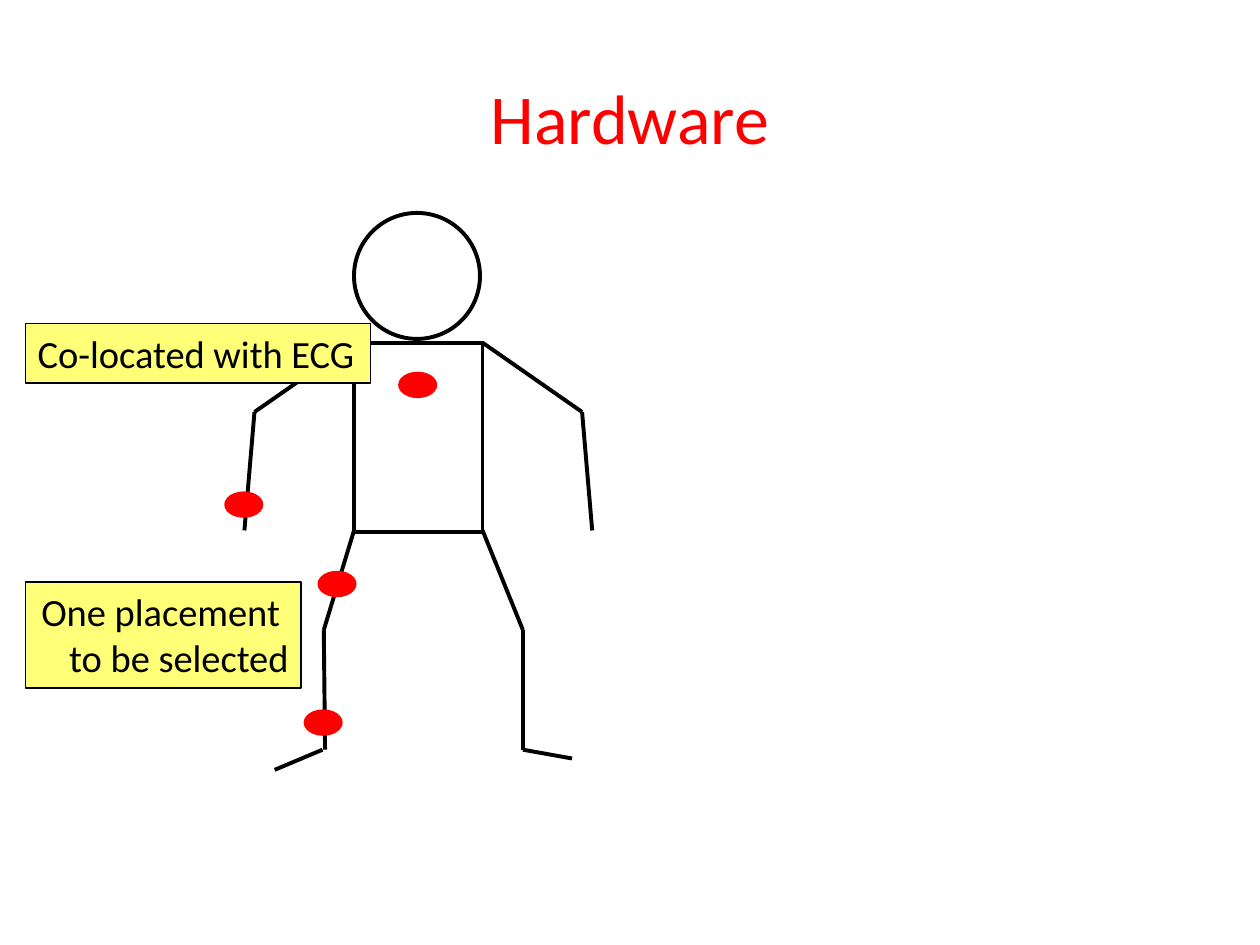
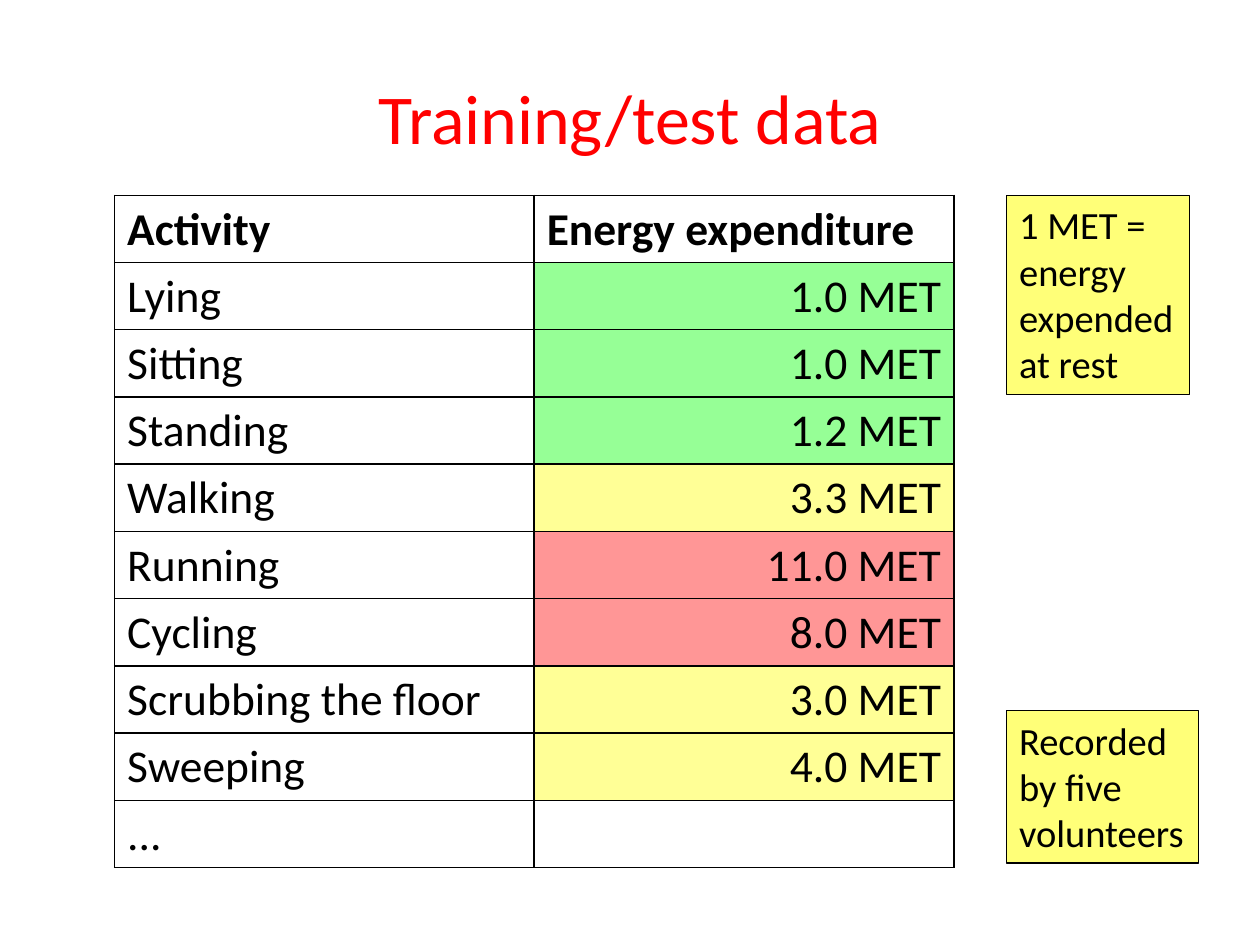
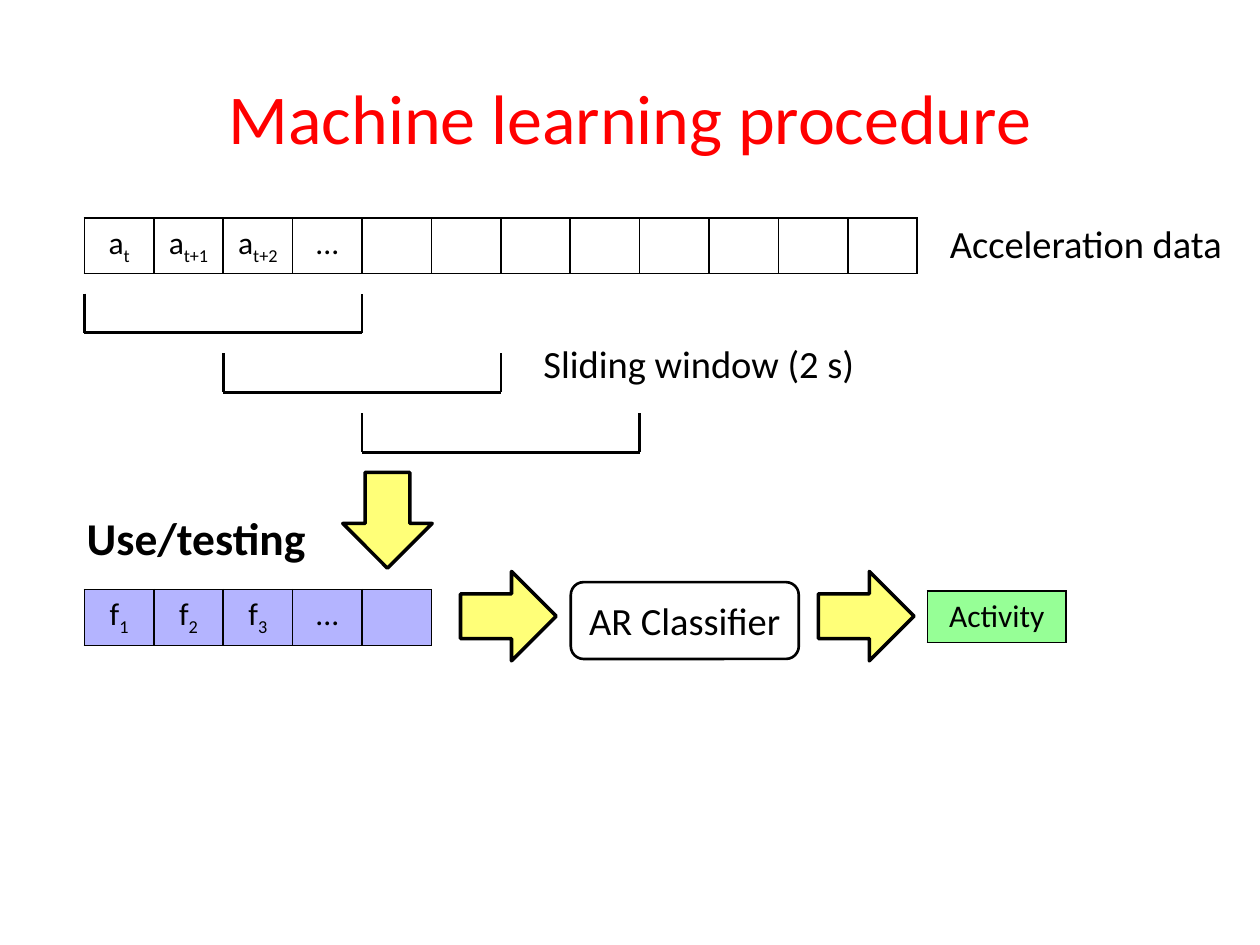
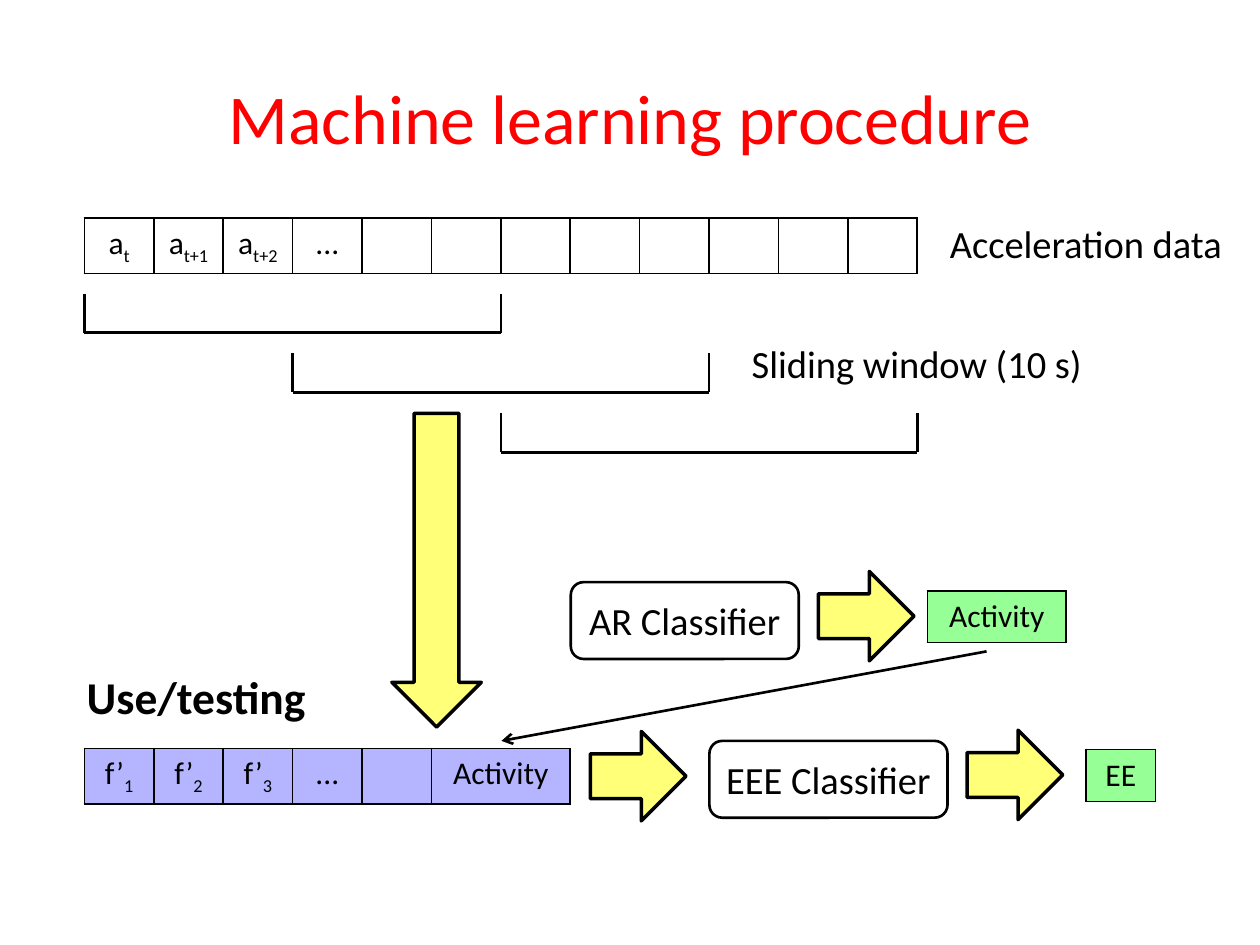
from dataclasses import dataclass

from lxml.etree import SubElement
from pptx import Presentation
from pptx.dml.color import RGBColor
from pptx.enum.shapes import MSO_CONNECTOR as Connector, MSO_SHAPE as Shape
from pptx.enum.text import MSO_ANCHOR as Anchor, MSO_AUTO_SIZE as AutoSize, PP_ALIGN as Align
from pptx.oxml import parse_xml
from pptx.oxml.ns import nsdecls, qn
from pptx.util import Inches, Pt


@dataclass(frozen=True)
class Theme:
    font: str = "Calibri"
    ink: str = "000000"
    red: str = "FF0000"
    note: str = "FFFF78"
    low: str = "96FF96"
    medium: str = "FFFF96"
    high: str = "FF9696"
    feature: str = "B4B4FF"
    title_size: int = 40
    heading_size: int = 26
    body_size: int = 22
    cell_size: int = 18
    figure_line: float = 2.25
    arrow_line: float = 2
    line: float = 1.5
    border: float = 1
    note_line: float = 0.75


THEME = Theme()

HEAD = (2.81, 1.69, 1, 1)
TORSO = (2.81, 2.72, 1.02, 1.5)
LIMBS = [
    [(3.83, 2.72), (4.62, 3.27), (4.7, 4.21)],
    [(2.81, 2.72), (2.02, 3.27), (1.94, 4.21)],
    [(3.83, 4.21), (4.15, 5), (4.15, 5.95), (4.54, 6.02)],
    [(2.81, 4.21), (2.57, 5), (2.58, 5.95)],
    [(2.56, 5.95), (2.18, 6.11)],
]
SENSOR_SIZE = (0.31, 0.21)
SENSORS = [(1.78, 3.9), (3.16, 2.95), (2.52, 4.53), (2.41, 5.63)]
HARDWARE_NOTES = [
    ((0.2, 2.57, 2.74, 0.47), ["Co-located with ECG"], Align.LEFT),
    ((0.2, 4.62, 2.19, 0.84), ["One placement ", "to be selected"], Align.RIGHT),
]

ACTIVITIES = [
    ("Lying", "1.0 MET", THEME.low),
    ("Sitting", "1.0 MET", THEME.low),
    ("Standing", "1.2 MET", THEME.low),
    ("Walking", "3.3 MET", THEME.medium),
    ("Running", "11.0 MET", THEME.high),
    ("Cycling", "8.0 MET", THEME.high),
    ("Scrubbing the floor", "3.0 MET", THEME.medium),
    ("Sweeping", "4.0 MET", THEME.medium),
    ("...", "", None),
]
DATA_NOTES = [
    ((7.99, 1.55, 1.45, 1.58), ["1 MET =", "energy", "expended", "at rest"], Align.LEFT),
    ((7.99, 5.64, 1.52, 1.21), ["Recorded", "by five", "volunteers"], Align.LEFT),
]

LEFT = 0.67
CELL = 6.61 / 12
ROW_HEIGHT = 0.41
ARROW = (0.71, 0.76)
SAMPLES = [("a", "t"), ("a", "t+1"), ("a", "t+2"), ("...",)] + [("",)] * 8
PROCEDURES = [
    {
        "window": (4, "Sliding window (2 s)", 2.69),
        "down": (2.72, 3.75, *ARROW),
        "heading_top": 4,
        "features": (4.68, [("f", "1"), ("f", "2"), ("f", "3"), ("...",), ("",)], [1] * 5),
        "right": [(3.68, 4.51), (6.52, 4.51)],
        "classifiers": [((4.53, 4.62, 1.81, 0.61), "AR Classifier")],
        "results": [(7.36, 4.69, "Activity", 2)],
        "feedback": None,
    },
    {
        "window": (6, "Sliding window (10 s)", 2.85),
        "down": (3.11, 3.28, 0.71, 2.49),
        "heading_top": 5.26,
        "features": (
            5.94,
            [("f’", "1"), ("f’", "2"), ("f’", "3"), ("...",), ("",), ("Activity",)],
            [1] * 5 + [2],
        ),
        "right": [(4.71, 5.78), (6.52, 4.51), (7.7, 5.77)],
        "classifiers": [
            ((4.53, 4.62, 1.81, 0.61), "AR Classifier"),
            ((5.63, 5.88, 1.89, 0.61), "EEE Classifier"),
        ],
        "results": [(7.36, 4.69, "Activity", 2), (8.62, 5.95, "EE", 1)],
        "feedback": ((7.83, 5.17), (3.98, 5.88)),
    },
]


def inches(values):
    return [Inches(value) for value in values]


def rgb(code):
    return RGBColor.from_string(code)


def add_span(para, text, size, color=THEME.ink, bold=False, subscript=False):
    span = para.add_run()
    span.text = text
    span.font.name = THEME.font
    span.font.size = Pt(size)
    span.font.bold = bold
    span.font.color.rgb = rgb(color)
    if subscript:
        span.font._element.set("baseline", "-25000")


def write(frame, lines, size, align=Align.LEFT, **style):
    for index, line in enumerate(lines):
        para = frame.add_paragraph() if index else frame.paragraphs[0]
        para.alignment = align
        add_span(para, line, size, **style)


def add_text(page, place, text, size, **style):
    frame = page.shapes.add_textbox(*inches(place)).text_frame
    frame.word_wrap = False
    frame.auto_size = AutoSize.SHAPE_TO_FIT_TEXT
    write(frame, [text], size, **style)


def add_page(deck, title):
    page = deck.slides.add_slide(deck.slide_layouts[6])
    frame = page.shapes.add_textbox(*inches((0.5, 0.3, 9, 1.25))).text_frame
    frame.word_wrap = True
    frame.vertical_anchor = Anchor.MIDDLE
    write(frame, [title], THEME.title_size, Align.CENTER, color=THEME.red)
    return page


def add_box(page, kind, place, fill=None, width=None):
    box = page.shapes.add_shape(kind, *inches(place))
    box.shadow.inherit = False
    if fill:
        box.fill.solid()
        box.fill.fore_color.rgb = rgb(fill)
    else:
        box.fill.background()
    if width:
        box.line.color.rgb = rgb(THEME.ink)
        box.line.width = Pt(width)
    else:
        box.line.fill.background()
    return box


def add_line(page, start, end, width, arrow=False):
    line = page.shapes.add_connector(Connector.STRAIGHT, *inches(start + end))
    line.line.color.rgb = rgb(THEME.ink)
    line.line.width = Pt(width)
    if arrow:
        SubElement(line.line._get_or_add_ln(), qn("a:tailEnd"), type="arrow")
    SubElement(line._element.spPr, qn("a:effectLst"))


def add_path(page, points, width):
    for start, end in zip(points, points[1:]):
        add_line(page, start, end, width)


def add_note(page, place, lines, align):
    frame = add_box(page, Shape.RECTANGLE, place, THEME.note, THEME.note_line).text_frame
    frame.word_wrap = False
    frame.auto_size = AutoSize.SHAPE_TO_FIT_TEXT
    frame.vertical_anchor = Anchor.TOP
    write(frame, lines, THEME.body_size, align)


def add_grid(page, left, top, widths, row_count, height):
    place = inches((left, top, sum(widths), height))
    table = page.shapes.add_table(row_count, len(widths), *place).table
    table.first_row = table.horz_banding = False
    for column, width in zip(table.columns, widths):
        column.width = Inches(width)
    return table


def fill_cell(cell, parts, size, align, fill=None, bold=False):
    if fill:
        cell.fill.solid()
        cell.fill.fore_color.rgb = rgb(fill)
    else:
        cell.fill.background()
    for index, side in enumerate(("lnL", "lnR", "lnT", "lnB")):
        border = parse_xml(
            f'<a:{side} {nsdecls("a")} w="{Pt(THEME.border)}"><a:solidFill>'
            f'<a:srgbClr val="{THEME.ink}"/></a:solidFill></a:{side}>'
        )
        cell._tc.get_or_add_tcPr().insert(index, border)
    para = cell.text_frame.paragraphs[0]
    para.alignment = align
    for index, text in enumerate(parts):
        if text:
            add_span(para, text, size, bold=bold, subscript=index > 0)


def add_strip(page, left, top, labels, spans, fill=None):
    widths = [CELL * count for count in spans]
    table = add_grid(page, left, top, widths, 1, ROW_HEIGHT)
    for cell, parts in zip(table.rows[0].cells, labels):
        fill_cell(cell, parts, THEME.cell_size, Align.CENTER, fill)


def add_block_arrow(page, place, rotation=0):
    arrow = add_box(page, Shape.DOWN_ARROW, place, THEME.note, THEME.arrow_line)
    arrow.rotation = rotation


def add_windows(page, cells, label, label_width):
    for index in range(3):
        left = LEFT + index * cells / 2 * CELL
        right = left + cells * CELL
        top = 2.33 + index * 0.475
        bottom = top + 0.31
        add_path(page, [(left, top), (left, bottom), (right, bottom), (right, top)], THEME.line)
    label_left = LEFT + 1.5 * cells * CELL + 0.24
    add_text(page, (label_left, 2.65, label_width, 0.47), label, THEME.body_size)


def build_hardware(deck):
    page = add_page(deck, "Hardware")
    add_box(page, Shape.OVAL, HEAD, width=THEME.figure_line)
    add_box(page, Shape.RECTANGLE, TORSO, width=THEME.figure_line)
    for limb in LIMBS:
        add_path(page, limb, THEME.figure_line)
    for sensor in SENSORS:
        add_box(page, Shape.OVAL, sensor + SENSOR_SIZE, THEME.red)
    for note in HARDWARE_NOTES:
        add_note(page, *note)


def build_data(deck):
    page = add_page(deck, "Training/test data")
    table = add_grid(page, 0.91, 1.55, [3.33, 3.33], len(ACTIVITIES) + 1, 5.33)
    size = THEME.heading_size
    for cell, text in zip(table.rows[0].cells, ("Activity", "Energy expenditure")):
        fill_cell(cell, [text], size, Align.LEFT, bold=True)
    for index, (activity, energy, fill) in enumerate(ACTIVITIES, 1):
        fill_cell(table.cell(index, 0), [activity], size, Align.LEFT)
        fill_cell(table.cell(index, 1), [energy], size, Align.RIGHT, fill)
    for note in DATA_NOTES:
        add_note(page, *note)


def build_procedure(deck, procedure):
    page = add_page(deck, "Machine learning procedure")
    add_strip(page, LEFT, 1.73, SAMPLES, [1] * len(SAMPLES))
    add_text(page, (7.44, 1.7, 2.38, 0.47), "Acceleration data", THEME.body_size)
    add_windows(page, *procedure["window"])
    add_block_arrow(page, procedure["down"])
    top, labels, spans = procedure["features"]
    add_strip(page, LEFT, top, labels, spans, THEME.feature)
    heading_place = (0.59, procedure["heading_top"], 1.96, 0.54)
    add_text(page, heading_place, "Use/testing", THEME.heading_size, bold=True)
    for corner in procedure["right"]:
        add_block_arrow(page, corner + ARROW, 270)
    for place, name in procedure["classifiers"]:
        box = add_box(page, Shape.ROUNDED_RECTANGLE, place, width=THEME.line)
        box.text_frame.vertical_anchor = Anchor.MIDDLE
        write(box.text_frame, [name], THEME.body_size, Align.CENTER)
    for left, top, text, span in procedure["results"]:
        add_strip(page, left, top, [(text,)], [span], THEME.low)
    if procedure["feedback"]:
        add_line(page, *procedure["feedback"], THEME.line, arrow=True)


def main():
    deck = Presentation()
    deck.slide_width, deck.slide_height = Inches(10), Inches(7.5)
    build_hardware(deck)
    build_data(deck)
    for procedure in PROCEDURES:
        build_procedure(deck, procedure)
    deck.save("out.pptx")


if __name__ == "__main__":
    main()
